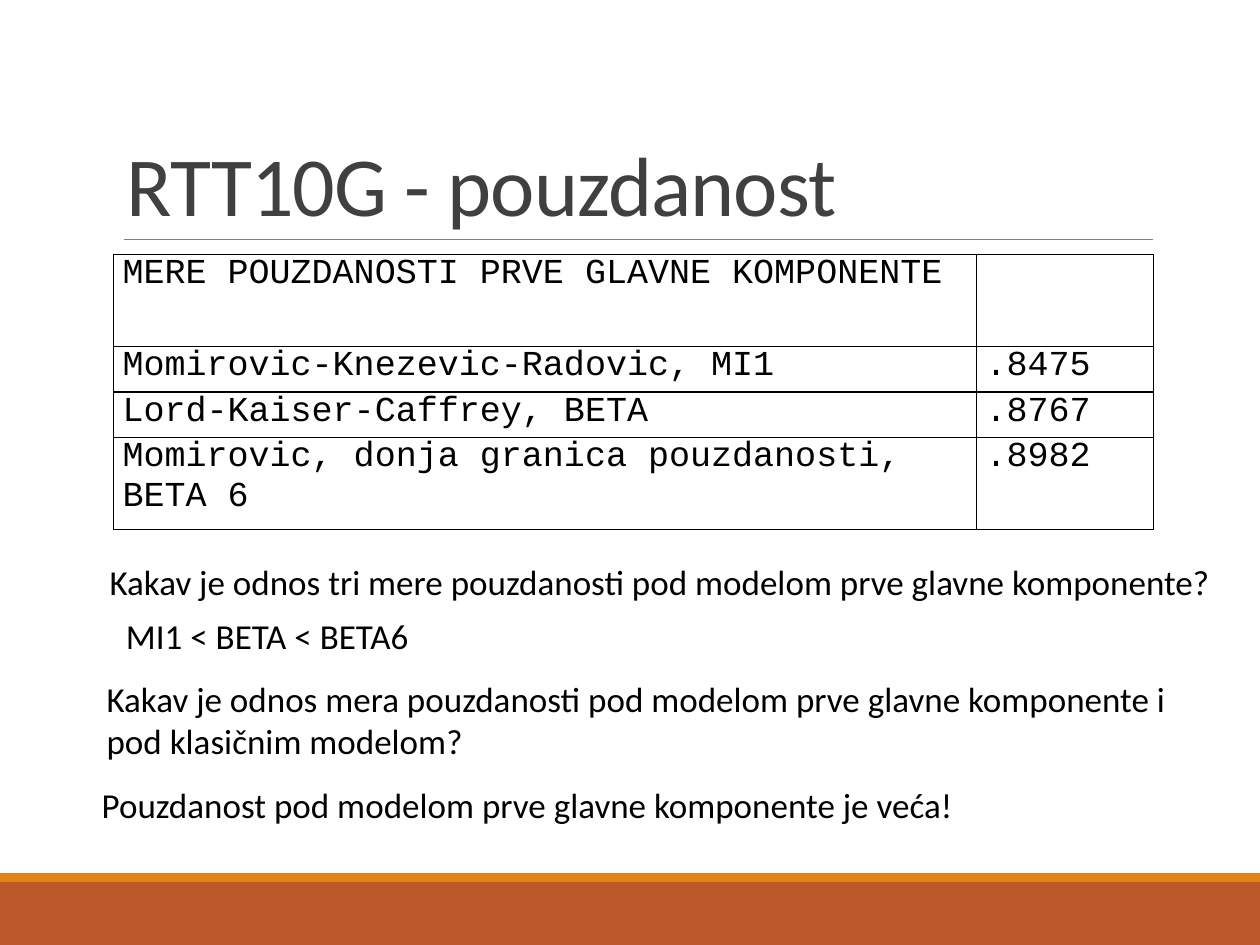
from lxml import etree
from pptx import Presentation
from pptx.dml.color import RGBColor
from pptx.enum import shapes, text
from pptx.oxml.ns import qn
from pptx.util import Cm, Pt

ROWS = [
    ("MERE POUZDANOSTI PRVE GLAVNE KOMPONENTE", ""),
    ("Momirovic-Knezevic-Radovic, MI1", ".8475"),
    ("Lord-Kaiser-Caffrey, BETA", ".8767"),
    ("Momirovic, donja granica pouzdanosti, BETA 6", ".8982"),
]
COLUMN_WIDTHS = (17.4, 3.56)
ROW_HEIGHTS = (1.85, 0.92, 0.92, 1.85)
NOTES = [
    ("Kakav je odnos tri mere pouzdanosti pod modelom prve glavne komponente?",
     (1.96, 11.18, 23.01, 1.12), True),
    ("MI1 < BETA < BETA6", (2.29, 12.27, 6.2, 1.12), False),
    ("Kakav je odnos mera pouzdanosti pod modelom prve glavne komponente i pod klasičnim modelom?",
     (1.9, 13.54, 23.06, 1.96), True),
    ("Pouzdanost pod modelom prve glavne komponente je veća!",
     (1.8, 15.67, 23.06, 1.12), True),
]


def color(value):
    return RGBColor.from_string(value)


def format_text(text_frame, size, font_name, font_color):
    for paragraph in text_frame.paragraphs:
        for font in [paragraph.font] + [run.font for run in paragraph.runs]:
            font.size = Pt(size)
            font.name = font_name
            font.color.rgb = color(font_color)


def add_band(slide, top, height, fill):
    shape = slide.shapes.add_shape(
        shapes.MSO_SHAPE.RECTANGLE, 0, Cm(top), Cm(25.4), Cm(height))
    shape.shadow.inherit = False
    shape.fill.solid()
    shape.fill.fore_color.rgb = color(fill)
    shape.line.fill.background()


def add_rule(slide, left, right, top):
    line = slide.shapes.add_connector(
        shapes.MSO_CONNECTOR.STRAIGHT, Cm(left), Cm(top), Cm(right), Cm(top))
    line.line.color.rgb = color("808080")
    line.line.width = Pt(0.5)
    etree.SubElement(line._element.spPr, qn("a:effectLst"))


def set_title(slide, wording):
    title = slide.shapes.title
    title.left, title.top, title.width, title.height = (
        Cm(2.29), Cm(0.79), Cm(20.96), Cm(4.04))
    text_frame = title.text_frame
    text_frame.text = wording
    text_frame.vertical_anchor = text.MSO_ANCHOR.BOTTOM
    text_frame.auto_size = text.MSO_AUTO_SIZE.NONE
    paragraph = text_frame.paragraphs[0]
    paragraph.alignment = text.PP_ALIGN.LEFT
    paragraph.line_spacing = 0.85
    format_text(text_frame, 48, "Calibri", "404040")
    paragraph.runs[0].font._element.set("spc", "-50")


def add_borders(cell):
    properties = cell._tc.get_or_add_tcPr()
    for index, side in enumerate(("lnL", "lnR", "lnT", "lnB")):
        border = etree.Element(qn(f"a:{side}"), w=str(Pt(1)))
        fill = etree.SubElement(border, qn("a:solidFill"))
        etree.SubElement(fill, qn("a:srgbClr"), val="000000")
        properties.insert(index, border)


def add_measures(slide):
    table = slide.shapes.add_table(
        len(ROWS), len(COLUMN_WIDTHS), Cm(2.29), Cm(5.13),
        Cm(sum(COLUMN_WIDTHS)), Cm(sum(ROW_HEIGHTS))).table
    table.first_row = False
    table.horz_banding = False
    for column, width in zip(table.columns, COLUMN_WIDTHS):
        column.width = Cm(width)
    for row, height, values in zip(table.rows, ROW_HEIGHTS, ROWS):
        row.height = Cm(height)
        for cell, value in zip(row.cells, values):
            cell.text_frame.text = value
            cell.margin_left = cell.margin_right = Cm(0.18)
            cell.margin_top = cell.margin_bottom = 0
            cell.fill.background()
            format_text(cell.text_frame, 20, "Courier New", "000000")
            add_borders(cell)


def add_note(slide, wording, box, wrap):
    text_frame = slide.shapes.add_textbox(*map(Cm, box)).text_frame
    text_frame.text = wording
    text_frame.word_wrap = wrap
    text_frame.auto_size = text.MSO_AUTO_SIZE.SHAPE_TO_FIT_TEXT
    format_text(text_frame, 20, "Calibri", "000000")


def main():
    presentation = Presentation()
    presentation.slide_width = Cm(25.4)
    presentation.slide_height = Cm(19.05)
    slide = presentation.slides.add_slide(presentation.slide_layouts[5])
    add_band(slide, 17.78, 1.27, "BD582C")
    add_band(slide, 17.6, 0.18, "E48312")
    add_rule(slide, 2.49, 23.24, 4.83)
    set_title(slide, "RTT10G - pouzdanost")
    add_measures(slide)
    for wording, box, wrap in NOTES:
        add_note(slide, wording, box, wrap)
    presentation.save("out.pptx")


if __name__ == "__main__":
    main()
